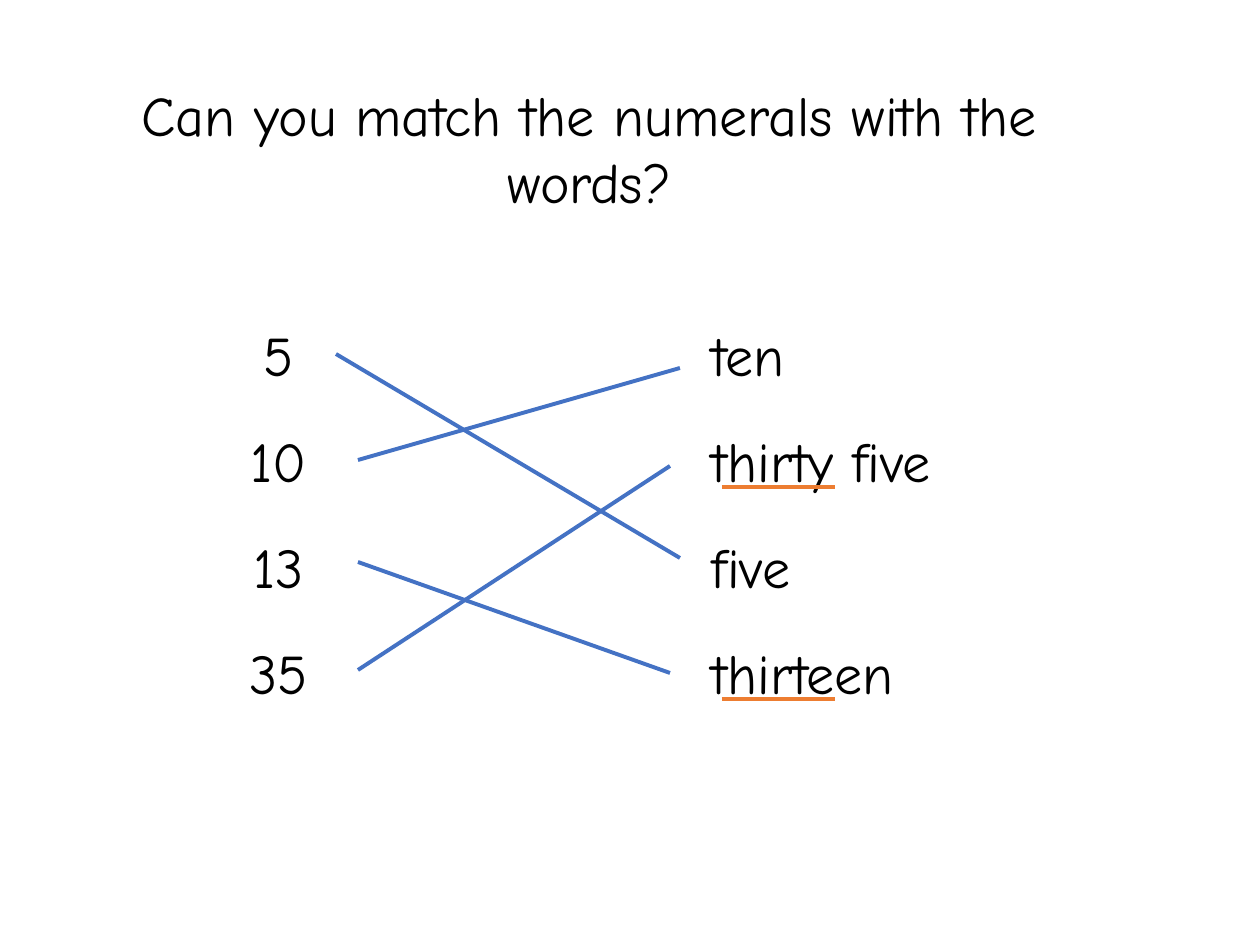
"""Build a slide that matches numerals with their number words."""
from dataclasses import dataclass

from lxml.etree import SubElement
from pptx import Presentation
from pptx.dml.color import RGBColor
from pptx.enum.shapes import MSO_CONNECTOR as Connector
from pptx.enum.text import MSO_ANCHOR as Anchor, MSO_AUTO_SIZE as AutoSize, PP_ALIGN as Align
from pptx.oxml.ns import qn
from pptx.slide import Slide
from pptx.text.text import TextFrame
from pptx.util import Emu, Pt

EMU_PER_PX = 914400 / 126
COLORS = {"text": "000000", "match": "4472C4", "underline": "ED7D31"}
FONT = "Comic Neue"
FONT_SIZE = 32
LINE_WIDTH = 2.25
ROW_TOP, ROW_PITCH, ROW_HEIGHT = 314, 106, 81
NUMERAL_LEFT, WORD_LEFT, ENTRY_WIDTH = 164, 699, 248
UNDERLINE_LEFT, UNDERLINE_RIGHT, UNDERLINE_DROP = 722, 835, 67


@dataclass(frozen=True)
class Row:
    numeral: str
    word: str
    word_width: int = ENTRY_WIDTH
    underlined: bool = False


@dataclass(frozen=True)
class Stroke:
    x1: int
    y1: int
    x2: int
    y2: int
    color: str = "match"


ROWS = [
    Row("5 ", "ten"),
    Row("10 ", "thirty five", word_width=388, underlined=True),
    Row("13 ", "five"),
    Row("35 ", "thirteen", underlined=True),
]
MATCHES = [
    Stroke(336, 354, 680, 558),
    Stroke(358, 460, 680, 368),
    Stroke(358, 562, 670, 673),
    Stroke(358, 670, 670, 466),
]


def px(length: int) -> Emu:
    return Emu(round(length * EMU_PER_PX))


def write(frame: TextFrame, text: str, align: Align) -> None:
    frame.text = text
    frame.word_wrap = True
    frame.auto_size = AutoSize.NONE
    frame.vertical_anchor = Anchor.TOP
    paragraph = frame.paragraphs[0]
    paragraph.alignment = align
    font = paragraph.runs[0].font
    font.name = FONT
    font.size = Pt(FONT_SIZE)
    font.color.rgb = RGBColor.from_string(COLORS["text"])


def add_title(slide: Slide, text: str) -> None:
    title = slide.shapes.title
    title.left, title.top, title.width, title.height = map(px, (121, 74, 937, 217))
    write(title.text_frame, text, Align.CENTER)


def add_entry(slide: Slide, text: str, left: int, top: int, width: int, align: Align) -> None:
    entry = slide.shapes.add_textbox(px(left), px(top), px(width), px(ROW_HEIGHT))
    write(entry.text_frame, text, align)


def add_stroke(slide: Slide, stroke: Stroke) -> None:
    ends = map(px, (stroke.x1, stroke.y1, stroke.x2, stroke.y2))
    connector = slide.shapes.add_connector(Connector.STRAIGHT, *ends)
    connector.line.color.rgb = RGBColor.from_string(COLORS[stroke.color])
    connector.line.width = Pt(LINE_WIDTH)
    SubElement(connector._element.spPr, qn("a:effectLst"))


def main() -> None:
    presentation = Presentation()
    presentation.slide_width, presentation.slide_height = px(1260), px(945)
    slide = presentation.slides.add_slide(presentation.slide_layouts.get_by_name("Title Only"))
    add_title(slide, "Can you match the numerals with the words?")
    underlines = []
    for index, row in enumerate(ROWS):
        top = ROW_TOP + index * ROW_PITCH
        add_entry(slide, row.numeral, NUMERAL_LEFT, top, ENTRY_WIDTH, Align.CENTER)
        add_entry(slide, row.word, WORD_LEFT, top, row.word_width, Align.LEFT)
        if row.underlined:
            y = top + UNDERLINE_DROP
            underlines.append(Stroke(UNDERLINE_LEFT, y, UNDERLINE_RIGHT, y, "underline"))
    for stroke in MATCHES + underlines:
        add_stroke(slide, stroke)
    presentation.save("out.pptx")


if __name__ == "__main__":
    main()
